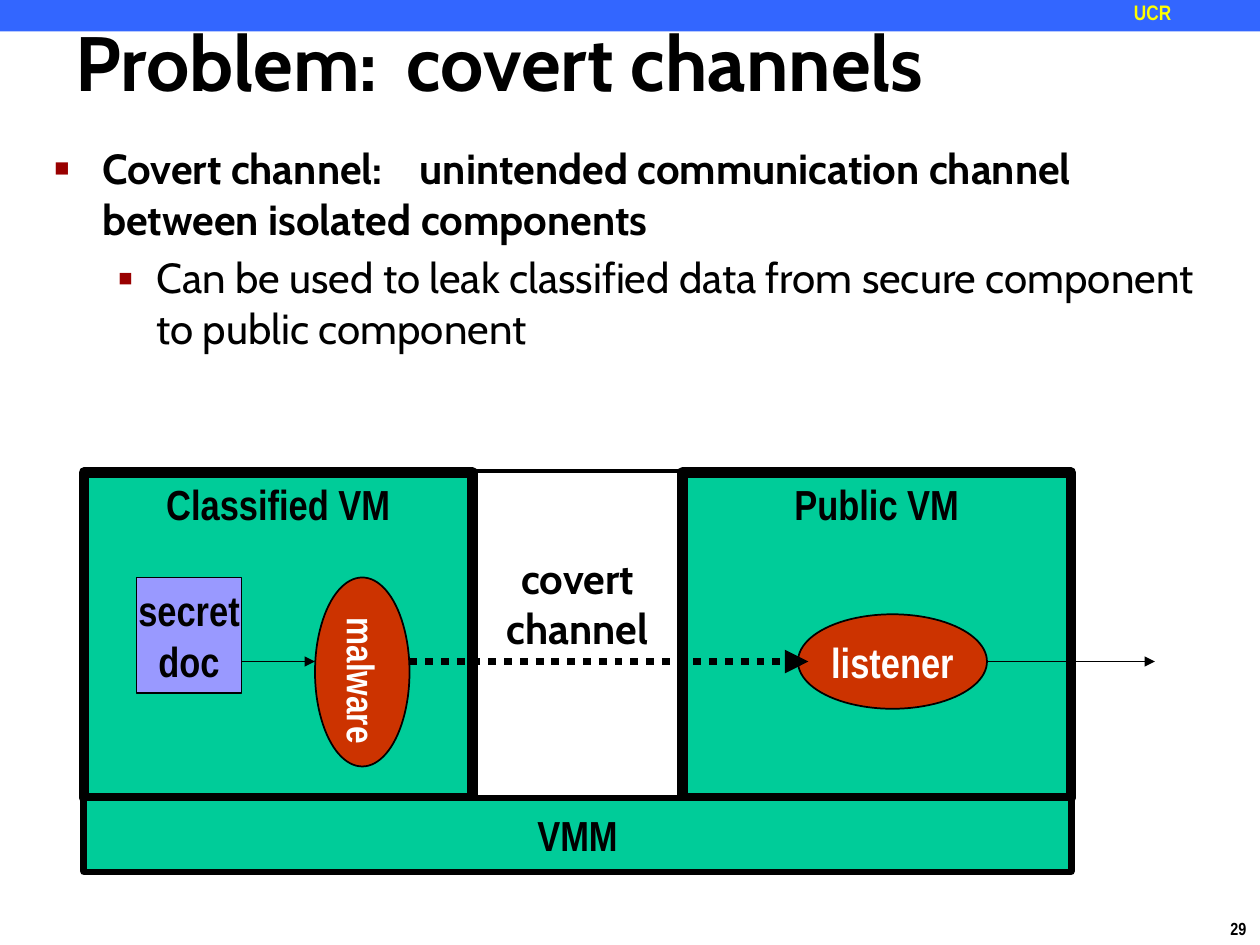
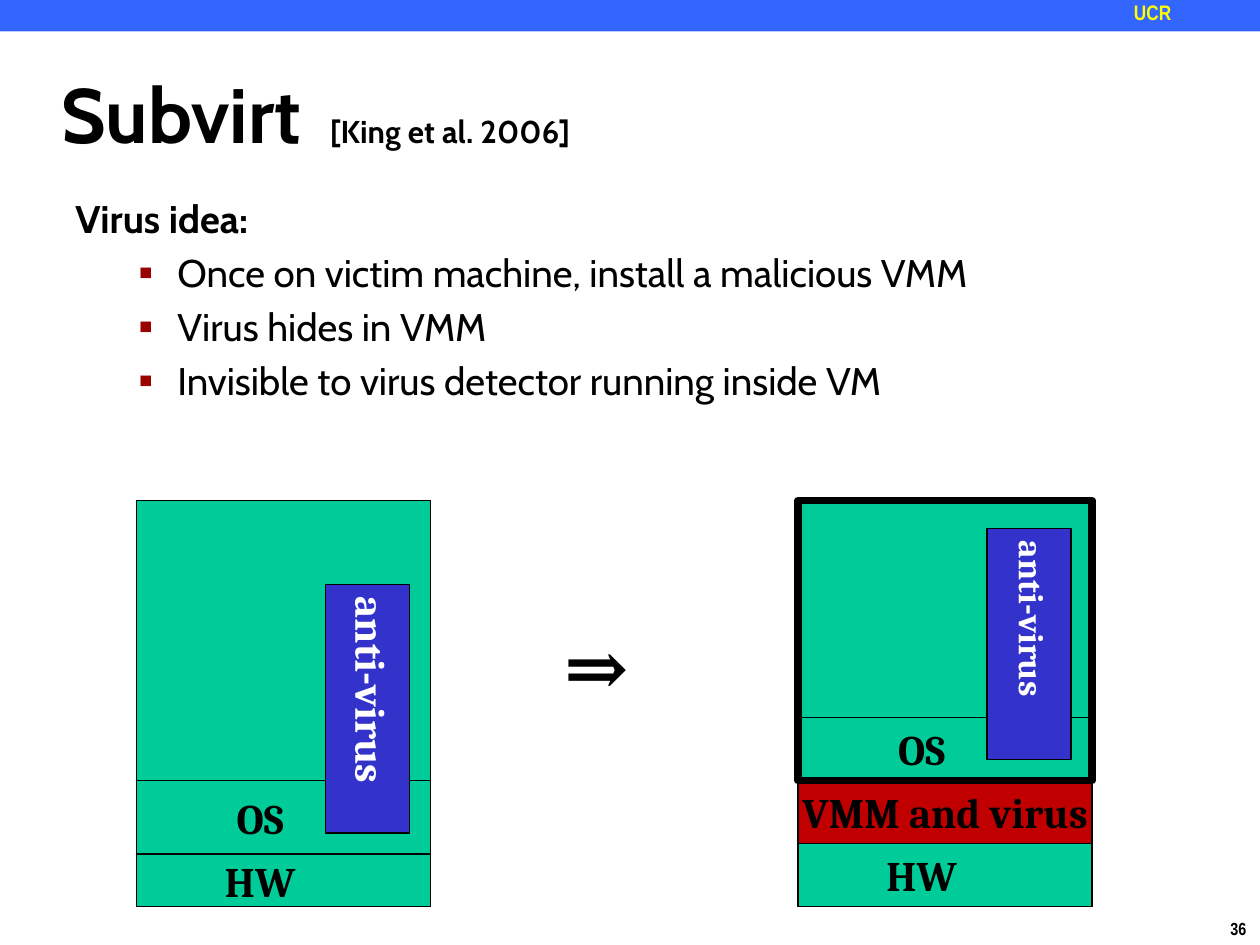
from lxml import etree
from pptx import Presentation
from pptx.dml.color import RGBColor
from pptx.enum.dml import MSO_LINE
from pptx.enum.shapes import MSO_CONNECTOR, MSO_SHAPE
from pptx.enum.text import MSO_ANCHOR, PP_ALIGN
from pptx.oxml.ns import qn
from pptx.util import Emu, Inches, Pt

RECT, OVAL = MSO_SHAPE.RECTANGLE, MSO_SHAPE.OVAL
LINE, DOTS = MSO_CONNECTOR.STRAIGHT, MSO_LINE.ROUND_DOT
LEFT, MID = PP_ALIGN.LEFT, PP_ALIGN.CENTER
TOP, CENTRE = MSO_ANCHOR.TOP, MSO_ANCHOR.MIDDLE

COLS, ROWS = 120, 90  # the slide as a grid, twelve cells to the inch
CELL = Inches(10) / COLS
COLOR = {
    "black": "000000", "white": "FFFFFF", "band": "3366FF", "tag": "FFFF00",
    "bullet": "990000", "green": "00CC99", "doc": "9999FF", "agent": "CC3300",
    "scan": "3333CC", "virus": "C00000",
}
HEAD, LABEL, STACK = "Cabin", "Arial Narrow", "Cambria"
# bullet by level: left margin, hanging indent, mark, size in percent
BULLET = {0: (0.38, -0.38, "■", 60), 1: (0.81, -0.31, "▪", 110)}


def grid(n):
    return Emu(round(n * CELL))


def rgb(name):
    return RGBColor.from_string(COLOR[name])


def inner(box, x, y, w, h):
    """Move a part, given relative to a box, onto the slide grid."""
    return box[0] + x, box[1] + y, w, h


def add_run(para, text, size, font, color="black", bold=True):
    run = para.add_run()
    run.text = text
    run.font.size, run.font.name, run.font.bold = Pt(size), font, bold
    run.font.color.rgb = rgb(color)


def set_frame(frame, anchor=TOP, wrap=False, turned=False):
    frame.word_wrap, frame.vertical_anchor = wrap, anchor
    if turned:
        frame._txBody.bodyPr.set("vert", "eaVert")


def write(frame, lines, size, font, color="black", align=MID, pitch=None):
    for i, line in enumerate(lines):
        para = frame.add_paragraph() if i else frame.paragraphs[0]
        para.alignment = align
        if pitch:
            para.line_spacing = pitch
        add_run(para, line, size, font, color)


def add_text(slide, box, anchor=TOP, wrap=False):
    frame = slide.shapes.add_textbox(*map(grid, box)).text_frame
    set_frame(frame, anchor, wrap)
    return frame


def add_box(slide, box, fill=None, width=0.75, kind=RECT):
    shape = slide.shapes.add_shape(kind, *map(grid, box))
    shape.shadow.inherit = False
    if fill:
        shape.fill.solid()
        shape.fill.fore_color.rgb = rgb(fill)
    else:
        shape.fill.background()
    if width:
        shape.line.color.rgb = rgb("black")
        shape.line.width = Pt(width)
    else:
        shape.line.fill.background()
    return shape


def add_label(shape, lines, size=24, font=LABEL, color="black",
              anchor=CENTRE, turned=False, pitch=None):
    set_frame(shape.text_frame, anchor, turned=turned)
    write(shape.text_frame, lines, size, font, color, pitch=pitch)


def add_arrow(slide, box, x1, x2, y, width=1, dash=None):
    ends = (box[0] + x1, box[1] + y, box[0] + x2, box[1] + y)
    arrow = slide.shapes.add_connector(LINE, *map(grid, ends))
    arrow.line.color.rgb = rgb("black")
    arrow.line.width = Pt(width)
    if dash:
        arrow.line.dash_style = dash
    line = arrow.line._get_or_add_ln()
    etree.SubElement(line, qn("a:tailEnd"), type="triangle")
    etree.SubElement(arrow._element.spPr, qn("a:effectLst"))


def indent(para, left, hang):
    props = para._p.get_or_add_pPr()
    props.set("marL", str(Inches(left)))
    props.set("indent", str(Inches(hang)))
    return props


def add_stop(props, inch):
    stops = etree.SubElement(props, qn("a:tabLst"))
    etree.SubElement(stops, qn("a:tab"), pos=str(Inches(inch)), algn="l")


def add_bullet(para, level):
    left, hang, mark, size = BULLET[level]
    props = indent(para, left, hang)
    tint = etree.SubElement(props, qn("a:buClr"))
    etree.SubElement(tint, qn("a:srgbClr"), val=COLOR["bullet"])
    etree.SubElement(props, qn("a:buSzPct"), val=str(size * 1000))
    etree.SubElement(props, qn("a:buFont"), typeface="Arial")
    etree.SubElement(props, qn("a:buChar"), char=mark)
    return props


def add_base(deck, number):
    """Blank slide with the top band, its tag and the page number."""
    slide = deck.slides.add_slide(deck.slide_layouts[6])
    add_box(slide, (0, 0, COLS, 3), "band", 0)
    tag = add_text(slide, (108, 0, 12, 2.64), wrap=True)
    tag.margin_left = tag.margin_right = tag.margin_top = tag.margin_bottom = 0
    write(tag, ["UCR"], 12, LABEL, "tag", LEFT)
    page = add_text(slide, (116, 86.8, 4, 3.2))
    write(page, [number], 10, LABEL, align=LEFT)
    return slide


def add_title(slide, box, runs, stop):
    para = add_text(slide, box, CENTRE, True).paragraphs[0]
    add_stop(indent(para, 0.13, -0.13), stop)
    for text, size in runs:
        add_run(para, text, size, HEAD)


def add_body(slide, box, items, size):
    """Each item: bullet level or None, text, bold, tab stop or None."""
    frame = add_text(slide, box, wrap=True)
    for i, (level, text, bold, stop) in enumerate(items):
        para = frame.add_paragraph() if i else frame.paragraphs[0]
        if level is not None:
            para.level = level
            props = add_bullet(para, level)
            if stop:
                add_stop(props, stop)
        para.space_before = Pt(size * 0.2)
        add_run(para, text, size, HEAD, bold=bold)


def draw_leak(slide, box):
    """Two machines on one VMM, with a channel leaking between them."""
    wide, high = box[2:]
    side, base = 37, 7
    top, gap = high - base, wide - 2 * side
    add_box(slide, box, "green", 4.5)
    add_box(slide, inner(box, side, 0, gap, top), "white", 1)
    for x, name in ((0, "Classified VM"), (wide - side, "Public VM")):
        room = add_box(slide, inner(box, x, 0, side, top), "green", 6)
        add_label(room, [name], anchor=TOP)

    # Agents inside the machines
    doc = add_box(slide, inner(box, 5, 10, 10, 11), "doc", 1)
    add_label(doc, ["secret", "doc"])
    spy = add_box(slide, inner(box, 22, 10, 9, 18), "agent", 1, OVAL)
    add_label(spy, ["malware"], 22, color="white", turned=True)
    ear = add_box(slide, inner(box, 68, 13.5, 18, 9), "agent", 1, OVAL)
    add_label(ear, ["listener"], color="white")

    # Flow from the document to the outside
    flow = 18
    add_arrow(slide, box, 15, 22, flow)
    add_arrow(slide, box, 31, 69, flow, 4.5, DOTS)
    add_arrow(slide, box, 86, 102, flow)
    note = add_text(slide, inner(box, side, 7, gap, 11))
    write(note, ["covert", "channel"], 24, HEAD)

    vmm = add_box(slide, inner(box, 0, top, wide, base), "green", 3)
    add_label(vmm, ["VMM"])


def draw_stack(slide, box, layers, scan, size, frame=None):
    """Layers from the bottom up, then the scanner, then a heavy frame."""
    wide, foot = box[2:]
    add_box(slide, box, "green")
    for name, high, fill, shift in layers:
        foot -= high
        layer = add_box(slide, inner(box, 0, foot, wide, high), fill)
        add_label(layer, [name], font=STACK)
        layer.text_frame.margin_right = Inches(0.1 + shift)
    guard = add_box(slide, inner(box, *scan), "scan")
    add_label(guard, ["anti-virus"], size, STACK, "white", turned=True, pitch=0.8)
    if frame:
        add_box(slide, inner(box, 0, 0, wide, frame), width=4.5)


def make_covert(deck):
    slide = add_base(deck, "29")
    add_title(slide, (6, -1.68, 108, 15), [("Problem:\tcovert channels", 44)], 2.8)
    add_body(slide, (4, 13, 114, 70), [
        (0, "Covert channel:\tunintended communication channel "
            "between isolated components", True, 2.9),
        (1, "Can be used to leak classified data from secure component "
            "to public component", False, None),
    ], 24)
    draw_leak(slide, (8, 45, 94, 38))


def make_virus(deck):
    slide = add_base(deck, "36")
    add_title(slide, (4.7, 5.75, 99.6, 10),
              [("Subvirt\t", 44), ("[King et al. 2006]", 18)], 2.32)
    points = ("Once on victim machine, install a malicious VMM",
              "Virus hides in VMM",
              "Invisible to virus detector running inside VM")
    add_body(slide, (6, 18, 110, 70),
             [(None, "Virus idea:", True, None)]
             + [(1, text, False, None) for text in points], 22)

    # Before and after the attack
    top, high, off = 47.67, 38.67, 0.37
    draw_stack(slide, (13, top, 28, high),
               [("HW", 5, "green", off), ("OS", 7, "green", off)],
               (18, 8, 8, 23.67), 24)
    sign = add_text(slide, (52, 58.3, 9.7, 10))
    write(sign, ["⇒"], 44, STACK)
    draw_stack(slide, (76, top, 28, high),
               [("HW", 6, "green", off), ("VMM and virus", 6, "virus", 0),
                ("OS", 6, "green", off)],
               (18, 2.67, 8, 22), 20, frame=26.67)


def main():
    deck = Presentation()
    deck.slide_width, deck.slide_height = grid(COLS), grid(ROWS)
    make_covert(deck)
    make_virus(deck)
    deck.save("out.pptx")


if __name__ == "__main__":
    main()
